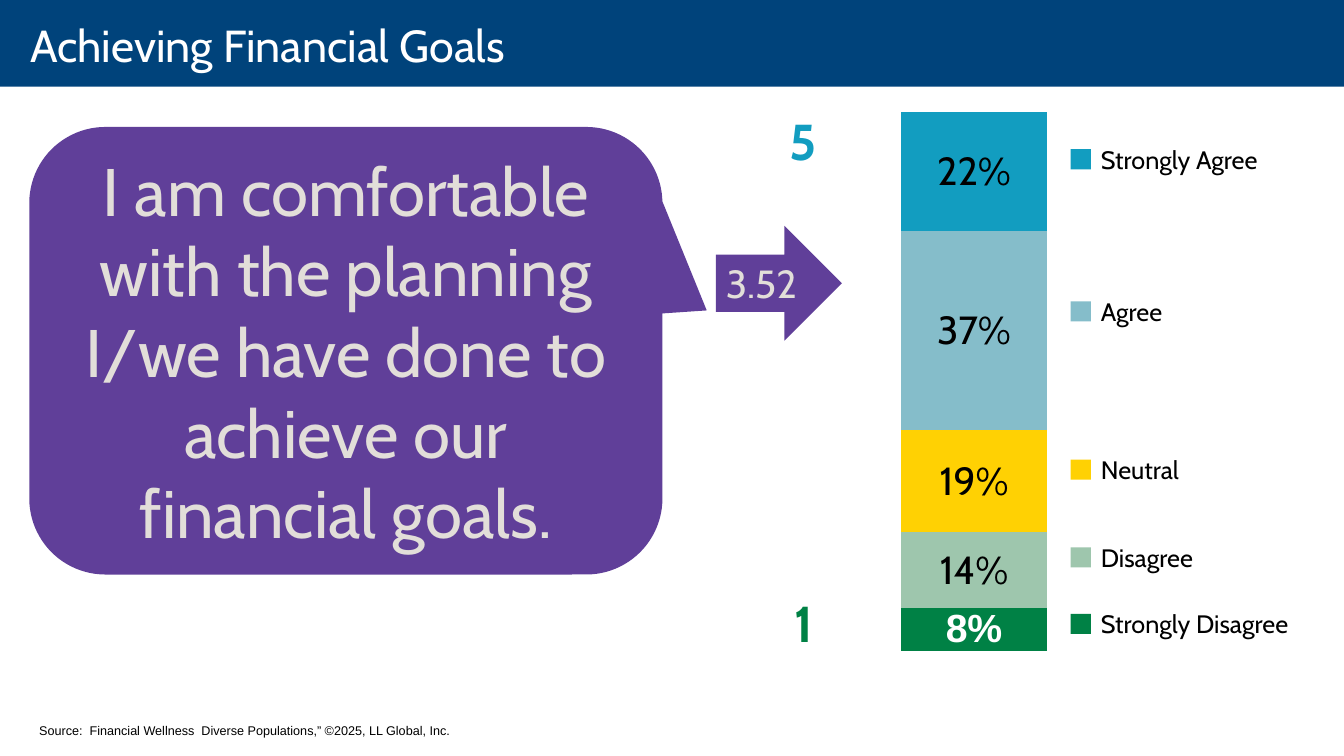
from dataclasses import dataclass

from lxml import etree
from pptx import Presentation
from pptx import util as u
from pptx.chart import data as chart_data
from pptx.dml.color import RGBColor
from pptx.enum import chart as chart_enum
from pptx.enum import shapes, text
from pptx.oxml import ns

NAVY = RGBColor(0x00, 0x43, 0x7B)
PURPLE = RGBColor(0x60, 0x3F, 0x99)
STONE = RGBColor(0xE2, 0xDE, 0xD9)
BLUE = RGBColor(0x12, 0x9D, 0xC0)
LIGHT_BLUE = RGBColor(0x85, 0xBD, 0xCA)
YELLOW = RGBColor(0xFF, 0xD1, 0x03)
LIGHT_GREEN = RGBColor(0x9E, 0xC6, 0xAD)
GREEN = RGBColor(0x00, 0x81, 0x45)
BLACK = RGBColor(0, 0, 0)
WHITE = RGBColor(255, 255, 255)

Box = tuple[float, float, float, float]


@dataclass(frozen=True)
class Answer:
    name: str
    share: float
    color: RGBColor
    swatch_top: float
    label_width: float


@dataclass(frozen=True)
class Style:
    size: float
    color: RGBColor
    font: str = "Cabin"
    bold: bool = False


ANSWERS = [
    Answer("Strongly Agree", 0.22, BLUE, 1.48, 1.76),
    Answer("Agree", 0.37, LIGHT_BLUE, 2.99, 0.83),
    Answer("Neutral", 0.19, YELLOW, 4.56, 1.02),
    Answer("Disagree", 0.14, LIGHT_GREEN, 5.43, 1.16),
    Answer("Strongly Disagree", 0.08, GREEN, 6.09, 2.1),
]
SWATCH_LEFT = 10.62
SWATCH_SIZE = 0.2


def apply_style(font, style: Style) -> None:
    font.name = style.font
    font.size = u.Pt(style.size)
    font.bold = style.bold
    font.color.rgb = style.color


def write(frame, words: str, style: Style, align=text.PP_ALIGN.LEFT,
          anchor=text.MSO_ANCHOR.TOP, wrap: bool = False) -> None:
    frame.word_wrap = wrap
    frame.vertical_anchor = anchor
    paragraph = frame.paragraphs[0]
    paragraph.alignment = align
    run = paragraph.add_run()
    run.text = words
    apply_style(run.font, style)


def add_filled(parent, kind, box: Box, color: RGBColor):
    shape = parent.add_shape(kind, *map(u.Inches, box))
    shape.shadow.inherit = False
    shape.fill.solid()
    shape.fill.fore_color.rgb = color
    shape.line.fill.background()
    return shape


def add_text(parent, box: Box, words: str, style: Style, **options):
    shape = parent.add_textbox(*map(u.Inches, box))
    write(shape.text_frame, words, style, **options)
    return shape


def add_header(slide) -> None:
    add_filled(slide.shapes, shapes.MSO_SHAPE.RECTANGLE, (0, 0, 13.33, 0.86), NAVY)
    title = add_text(slide.shapes, (0, -0.04, 13.33, 0.97), "Achieving Financial Goals",
                     Style(32, WHITE), anchor=text.MSO_ANCHOR.MIDDLE, wrap=True)
    frame = title.text_frame
    frame.margin_left, frame.margin_right = u.Inches(0.3), u.Inches(0.2)
    frame.margin_top = frame.margin_bottom = 0


def set_plot_layout(chart, **fractions: float) -> None:
    plot_area = chart.plots[0]._element.getparent()
    for layout in plot_area.findall(ns.qn("c:layout")):
        plot_area.remove(layout)
    layout = etree.Element(ns.qn("c:layout"))
    plot_area.insert(0, layout)
    manual = etree.SubElement(layout, ns.qn("c:manualLayout"))
    settings = {"layoutTarget": "inner", "xMode": "edge", "yMode": "edge", **fractions}
    for tag, value in settings.items():
        etree.SubElement(manual, ns.qn(f"c:{tag}")).set("val", str(value))


def add_answer_chart(slide) -> None:
    values = chart_data.CategoryChartData(number_format="0%")
    values.categories = ["1"]
    for answer in ANSWERS:
        values.add_series(answer.name, [answer.share])
    chart = slide.shapes.add_chart(
        chart_enum.XL_CHART_TYPE.COLUMN_STACKED_100,
        *map(u.Inches, (7.78, 1, 3.76, 5.57)), values).chart
    chart.has_legend = False
    chart.has_title = False
    apply_style(chart.font, Style(10, BLACK, "Arial"))
    chart.category_axis.visible = False
    axis = chart.value_axis
    axis.visible = False
    axis.has_major_gridlines = False
    axis.reverse_order = True
    axis.minimum_scale, axis.maximum_scale = 0, 1
    plot = chart.plots[0]
    plot.vary_by_categories = False
    plot.gap_width, plot.overlap = 150, 100
    for answer, series in zip(ANSWERS, plot.series):
        series.format.fill.solid()
        series.format.fill.fore_color.rgb = answer.color
        labels = series.data_labels
        labels.show_value = True
        labels.number_format = "0%"
        labels.number_format_is_linked = False
        labels.position = chart_enum.XL_LABEL_POSITION.CENTER
        is_last = answer is ANSWERS[-1]
        apply_style(labels.font, Style(28, WHITE if is_last else BLACK, "Arial", True))
        if not is_last:
            label = series.points[0].data_label
            run = label.text_frame.paragraphs[0].add_run()
            run.text = f"{answer.share:.0%}"
            apply_style(run.font, Style(28, BLACK))
            label.position = chart_enum.XL_LABEL_POSITION.CENTER
    set_plot_layout(chart, x=0.02, y=0.02, w=0.96, h=0.96)


def add_legend(slide) -> None:
    for answer in ANSWERS:
        group = slide.shapes.add_group_shape()
        add_filled(group.shapes, shapes.MSO_SHAPE.RECTANGLE,
                   (SWATCH_LEFT, answer.swatch_top, SWATCH_SIZE, SWATCH_SIZE), answer.color)
        add_text(group.shapes,
                 (SWATCH_LEFT + SWATCH_SIZE, answer.swatch_top - 0.1, answer.label_width, 0.4),
                 answer.name, Style(18, BLACK))


def add_statement(slide) -> None:
    callout = add_filled(slide.shapes, shapes.MSO_SHAPE.ROUNDED_RECTANGULAR_CALLOUT,
                         (0.29, 1.26, 6.28, 4.44), PURPLE)
    for index, value in enumerate((0.57, -0.09, 0.17)):
        callout.adjustments[index] = value
    write(callout.text_frame,
          "I am comfortable with the planning I/we have done to achieve our financial goals.",
          Style(48, STONE), align=text.PP_ALIGN.CENTER,
          anchor=text.MSO_ANCHOR.MIDDLE, wrap=True)
    arrow = add_filled(slide.shapes, shapes.MSO_SHAPE.RIGHT_ARROW,
                       (7.1, 2.24, 1.25, 1.14), PURPLE)
    write(arrow.text_frame, "3.52", Style(28, STONE))


def main() -> None:
    presentation = Presentation()
    presentation.slide_width = u.Inches(13.33)
    presentation.slide_height = u.Inches(7.5)
    slide = presentation.slides.add_slide(presentation.slide_layouts[6])
    add_header(slide)
    add_answer_chart(slide)
    add_text(slide.shapes, (7.73, 1.04, 0.48, 0.71), "5", Style(36, BLUE, bold=True))
    add_text(slide.shapes, (7.78, 5.82, 0.48, 0.71), "1", Style(36, GREEN, bold=True))
    add_statement(slide)
    add_legend(slide)
    add_text(slide.shapes, (0.29, 7.12, 5.19, 0.25),
             "Source:  Financial Wellness  Diverse Populations,” ©2025, LL Global, Inc.",
             Style(9, BLACK, "Arial"), wrap=True)
    presentation.save("out.pptx")


if __name__ == "__main__":
    main()
